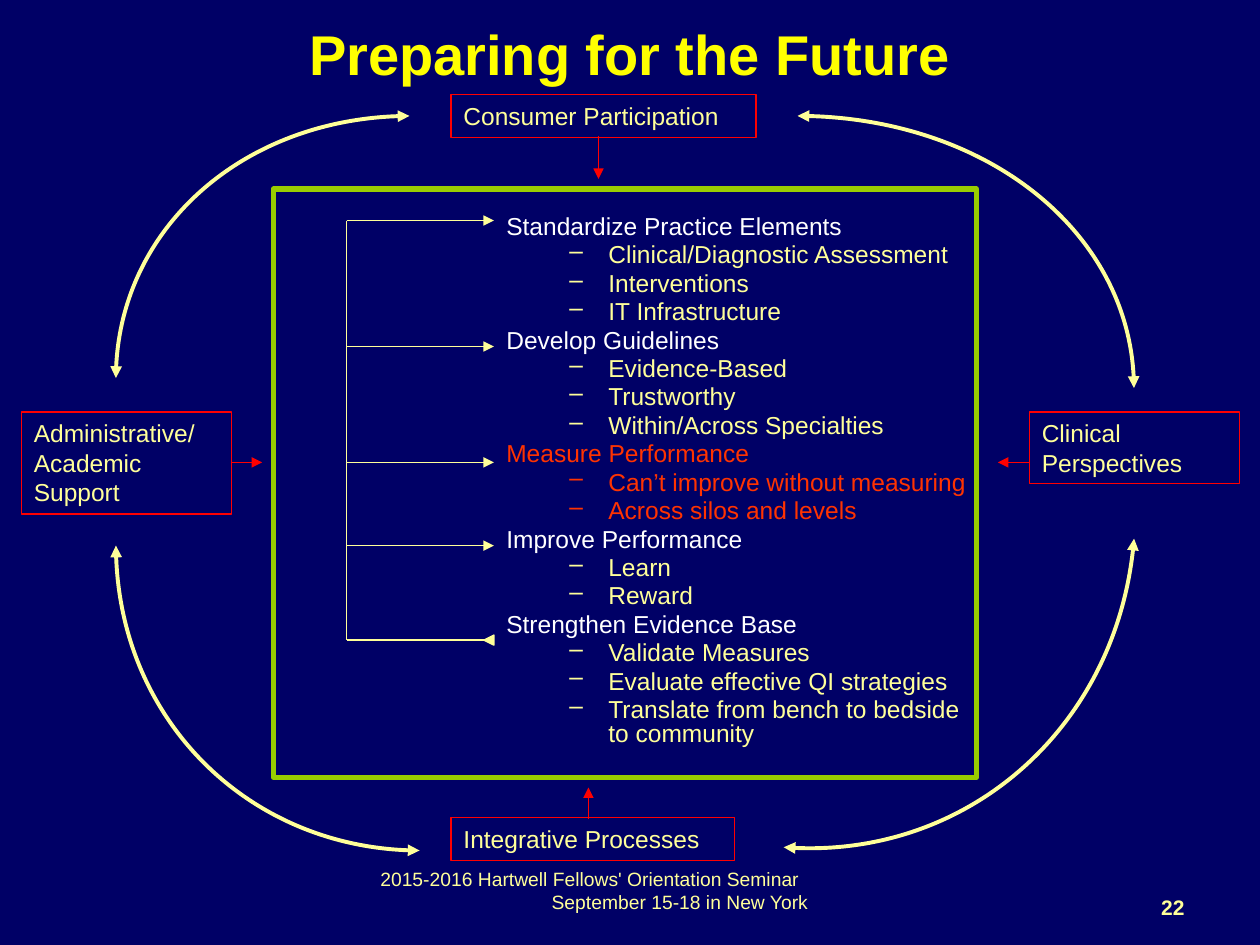
from lxml import etree
from pptx import Presentation
from pptx.dml.color import RGBColor
from pptx.enum.shapes import MSO_CONNECTOR, MSO_SHAPE
from pptx.enum.text import MSO_ANCHOR, PP_ALIGN
from pptx.oxml.ns import qn
from pptx.util import Inches, Pt

STRAIGHT = MSO_CONNECTOR.STRAIGHT
RECTANGLE, TRIANGLE = MSO_SHAPE.RECTANGLE, MSO_SHAPE.ISOSCELES_TRIANGLE
TOP, MIDDLE, BOTTOM = MSO_ANCHOR.TOP, MSO_ANCHOR.MIDDLE, MSO_ANCHOR.BOTTOM
LEFT, CENTER, RIGHT = PP_ALIGN.LEFT, PP_ALIGN.CENTER, PP_ALIGN.RIGHT

NAVY = RGBColor(0x00, 0x00, 0x66)
YELLOW = RGBColor(0xFF, 0xFF, 0x00)
CREAM = RGBColor(0xFF, 0xFF, 0x99)
WHITE = RGBColor(0xFF, 0xFF, 0xFF)
ORANGE = RGBColor(0xFF, 0x33, 0x00)
RED = RGBColor(0xFF, 0x00, 0x00)
GREEN = RGBColor(0x99, 0xCC, 0x00)

FONT = "Arial"
QUARTER = 0.5523  # Bezier handle length for a quarter ellipse

# Heading, heading colour, item colour, items
STEPS = [
    ("Standardize Practice Elements", WHITE, CREAM,
     ["Clinical/Diagnostic Assessment", "Interventions", "IT Infrastructure"]),
    ("Develop Guidelines", WHITE, CREAM,
     ["Evidence-Based", "Trustworthy", "Within/Across Specialties"]),
    ("Measure Performance", ORANGE, ORANGE,
     ["Can’t improve without measuring", "Across silos and levels"]),
    ("Improve Performance", WHITE, CREAM, ["Learn", "Reward"]),
    ("Strengthen Evidence Base", WHITE, CREAM,
     ["Validate Measures", "Evaluate effective QI strategies",
      "Translate from bench to bedside to community"]),
]
# Box and lines of each outside influence
INFLUENCES = [
    ((3.58, 0.75, 2.42, 0.34), ["Consumer Participation"]),
    ((0.17, 3.27, 1.67, 0.81), ["Administrative/", "Academic", "Support"]),
    ((8.17, 3.27, 1.67, 0.57), ["Clinical", "Perspectives"]),
    ((3.58, 6.49, 2.25, 0.34), ["Integrative Processes"]),
]
INWARD_ARROWS = [
    ((4.75, 1.08), (4.75, 1.42)),
    ((4.67, 6.5), (4.67, 6.25)),
    ((1.83, 3.67), (2.08, 3.67)),
    ((8.17, 3.67), (7.92, 3.67)),
]
# Level end, upright end, rotation of each arc in the outer ring
RING = [
    ((6.33, 0.92), (9, 3.08), 0),
    ((6.32, 6.83), (8.9, 4.17), 4.5),
    ((3.33, 6.75), (0.92, 4.33), 0),
    ((3.25, 0.92), (0.92, 3), 0),
]


def inches(values):
    return [Inches(value) for value in values]


def add_text(paragraph, text, size, color, bold=False):
    run = paragraph.add_run()
    run.text = text
    run.font.name, run.font.size, run.font.bold = FONT, Pt(size), bold
    run.font.color.rgb = color


def set_indent(paragraph, left, first=0):
    properties = paragraph._p.get_or_add_pPr()
    properties.set("marL", str(Inches(left)))
    properties.set("indent", str(Inches(first)))
    return properties


def add_text_box(slide, box, anchor=TOP):
    frame = slide.shapes.add_textbox(*inches(box)).text_frame
    frame.word_wrap = True
    frame.vertical_anchor = anchor
    return frame


def style_line(shape, color, width, ends=()):
    shape.line.color.rgb = color
    shape.line.width = Pt(width)
    for end in ends:
        etree.SubElement(shape.line._get_or_add_ln(), qn(f"a:{end}"), type="triangle")


def add_line(slide, start, end, color, arrow=True):
    line = slide.shapes.add_connector(STRAIGHT, *inches(start + end))
    style_line(line, color, 0.75, ["tailEnd"] if arrow else [])
    etree.SubElement(line._element.spPr, qn("a:effectLst"))


def add_frame(slide, box, color, width):
    frame = slide.shapes.add_shape(RECTANGLE, *inches(box))
    frame.shadow.inherit = False
    frame.fill.background()
    style_line(frame, color, width)
    return frame


def add_arc(slide, level_end, upright_end, rotation):
    (x1, y1), (x2, y2) = inches(level_end), inches(upright_end)
    builder = slide.shapes.build_freeform(x1, y1)
    builder.add_line_segments([(x2, y2)], close=False)
    arc = builder.convert_to_shape()
    arc.shadow.inherit = False
    arc.fill.background()
    style_line(arc, CREAM, 2.25, ["headEnd", "tailEnd"])
    arc.rotation = rotation

    # Bend the straight segment into a quarter ellipse
    segment = arc._element.find(".//" + qn("a:lnTo"))
    curve = etree.Element(qn("a:cubicBezTo"))
    handles = [(x1 + QUARTER * (x2 - x1), y1), (x2, y2 - QUARTER * (y2 - y1)), (x2, y2)]
    for x, y in handles:
        etree.SubElement(curve, qn("a:pt"), x=str(round(x - min(x1, x2))),
                         y=str(round(y - min(y1, y2))))
    segment.getparent().replace(segment, curve)


def add_title(slide, box):
    title = slide.shapes.title
    title.left, title.top, title.width, title.height = inches(box)
    title.text_frame.vertical_anchor = MIDDLE
    paragraph = title.text_frame.paragraphs[0]
    paragraph.alignment = CENTER
    add_text(paragraph, "Preparing for the Future", 32, YELLOW, bold=True)


def add_steps(slide, box):
    frame = add_text_box(slide, box)
    rows = []
    for heading, heading_color, item_color, items in STEPS:
        rows.append((heading, heading_color, False))
        rows += [(item, item_color, True) for item in items]
    for index, (text, color, is_item) in enumerate(rows):
        paragraph = frame.add_paragraph() if index else frame.paragraphs[0]
        paragraph.line_spacing = 0.8
        paragraph.space_before = Pt(2.8)
        if is_item:
            paragraph.level = 1
            properties = set_indent(paragraph, 0.81, -0.31)
            etree.SubElement(properties, qn("a:buChar"), char="–")
        else:
            set_indent(paragraph, 0.38, -0.38)
        add_text(paragraph, text, 14, color)


def add_feedback_loop(slide, box):
    left, top, width, height = box
    right, bottom = left + width, top + height
    add_line(slide, (left, top), (left, bottom), CREAM, arrow=False)
    for y in (top, 2.75, 3.67, 4.33):
        add_line(slide, (left, y), (right, y), CREAM)

    # The last branch leads back from the evidence base
    size = 0.08
    add_line(slide, (left, bottom), (right - size, bottom), CREAM, arrow=False)
    tip = slide.shapes.add_shape(
        TRIANGLE, *inches((right - size, bottom - size / 2, size, size)))
    tip.shadow.inherit = False
    tip.fill.solid()
    tip.fill.fore_color.rgb = CREAM
    style_line(tip, CREAM, 0.75)
    tip.rotation = 270


def add_influence(slide, box, lines):
    frame = add_frame(slide, box, RED, 0.75).text_frame
    frame.word_wrap = True
    frame.vertical_anchor = TOP
    paragraph = frame.paragraphs[0]
    paragraph.alignment = LEFT
    for index, line in enumerate(lines):
        if index:
            paragraph.add_line_break()
        add_text(paragraph, line, 14, CREAM)


def add_footer(slide, box):
    frame = add_text_box(slide, box)
    add_text(frame.paragraphs[0], "2015-2016 Hartwell Fellows' Orientation Seminar", 11, CREAM)
    dates = frame.add_paragraph()
    set_indent(dates, 1.36)
    add_text(dates, "September 15-18 in New York", 11, CREAM)


def add_page_number(slide, box):
    paragraph = add_text_box(slide, box, BOTTOM).paragraphs[0]
    paragraph.alignment = RIGHT
    add_text(paragraph, "22", 12, CREAM, bold=True)


def main():
    deck = Presentation()
    deck.slide_width, deck.slide_height = Inches(10), Inches(7.5)
    slide = deck.slides.add_slide(deck.slide_layouts[5])
    slide.background.fill.solid()
    slide.background.fill.fore_color.rgb = NAVY

    add_title(slide, (0.5, 0.17, 9, 0.5))
    add_steps(slide, (3.92, 1.67, 3.92, 5))
    add_feedback_loop(slide, (2.75, 1.75, 1.17, 3.33))
    for box, lines in INFLUENCES:
        add_influence(slide, box, lines)
    for arc in RING:
        add_arc(slide, *arc)
    add_frame(slide, (2.17, 1.5, 5.58, 4.67), GREEN, 3)
    for start, end in INWARD_ARROWS:
        add_line(slide, start, end, RED)
    add_page_number(slide, (7.17, 6.83, 2.33, 0.52))
    add_footer(slide, (2.92, 6.83, 4.25, 0.52))
    deck.save("out.pptx")


if __name__ == "__main__":
    main()
